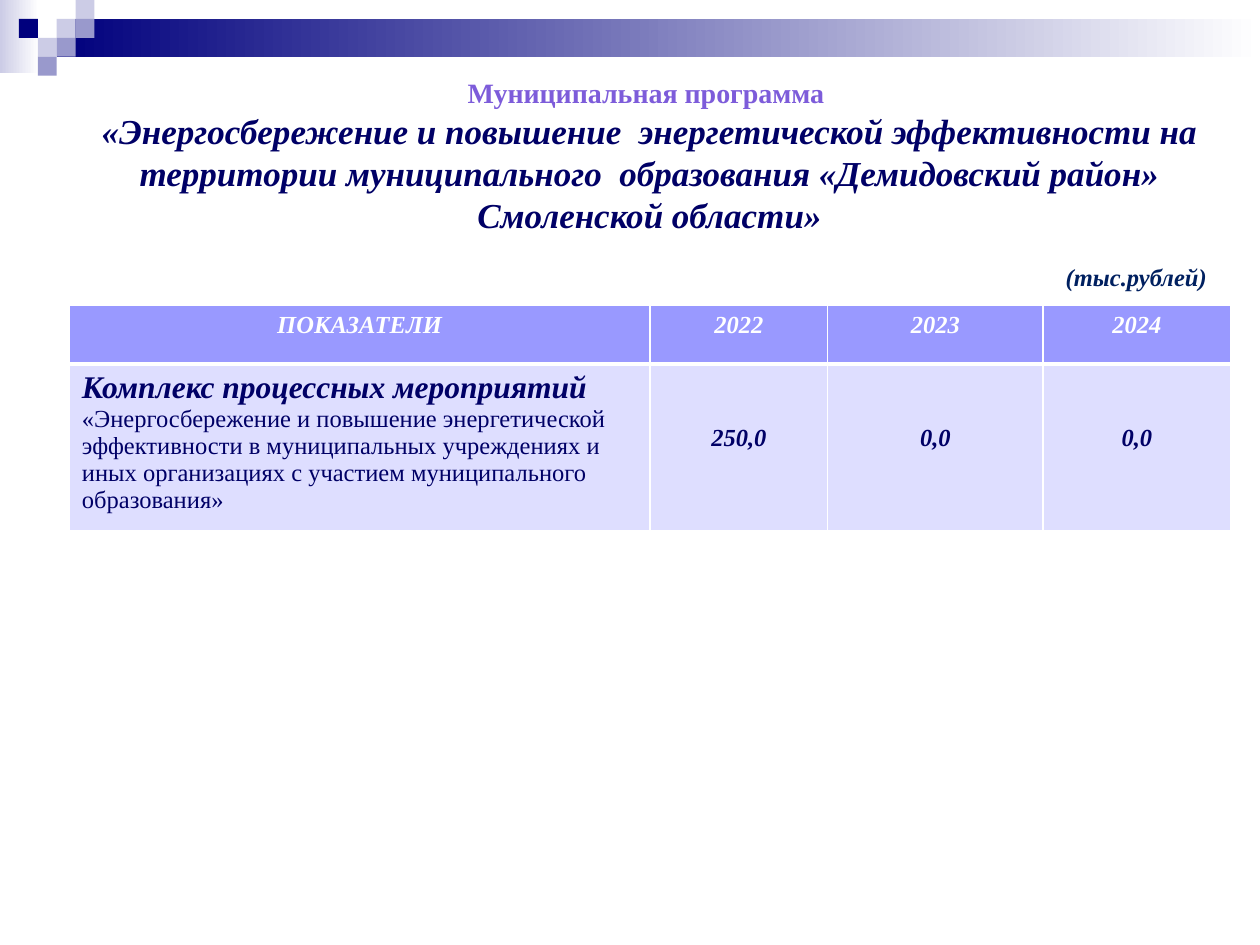
from lxml.etree import SubElement
from pptx import Presentation
from pptx.dml.color import RGBColor
from pptx.enum.shapes import MSO_SHAPE
from pptx.enum.text import MSO_ANCHOR, PP_ALIGN
from pptx.oxml.ns import qn
from pptx.util import Pt

FONT = "Times New Roman"
WHITE = RGBColor(0xFF, 0xFF, 0xFF)
NAVY = RGBColor(0x00, 0x00, 0x7D)
INK = RGBColor(0x00, 0x00, 0x66)
UNIT_INK = RGBColor(0x00, 0x20, 0x60)
VIOLET = RGBColor(0x7D, 0x5C, 0xDA)
PALE = RGBColor(0xCC, 0xCC, 0xE6)
MID = RGBColor(0x99, 0x99, 0xCC)
HEADER_FILL = RGBColor(0x99, 0x99, 0xFF)
BODY_FILL = RGBColor(0xDE, 0xDE, 0xFF)

PROGRAM_KIND = "Муниципальная программа "
PROGRAM_NAME = ("«Энергосбережение и повышение  энергетической эффективности на территории "
                "муниципального  образования «Демидовский район» Смоленской области»")
UNIT = "(тыс.рублей)"
HEADERS = ["ПОКАЗАТЕЛИ", "2022", "2023", "2024"]
MEASURE = "Комплекс процессных мероприятий "
MEASURE_NAME = ("«Энергосбережение и повышение энергетической эффективности в муниципальных "
                "учреждениях и иных организациях с участием муниципального образования»")
VALUES = ["250,0", "0,0", "0,0"]

COL_WIDTHS = [331.9, 101.5, 123.1, 107.3]
ROW_HEIGHTS = [33.8, 95.4]
SQUARE = 10.8
SQUARES_LEFT = 21.6
# column, row, colour of each decorative square
SQUARES = [(1, 1, PALE), (2, 0, PALE), (2, 1, MID), (0, 2, PALE),
           (-1, 1, NAVY), (1, 2, MID), (0, 3, MID)]


def add_text(p, text, size=14, color=INK, bold=True, italic=True, align=PP_ALIGN.CENTER):
    p.alignment = align
    r = p.add_run()
    r.text = text
    f = r.font
    f.name, f.size, f.bold, f.italic = FONT, Pt(size), bold, italic
    f.color.rgb = color


def add_rect(slide, x, y, w, h, color, fade=False):
    """Add a rectangle, solid or fading to white towards the right."""
    sp = slide.shapes.add_shape(MSO_SHAPE.RECTANGLE, Pt(x), Pt(y), Pt(w), Pt(h))
    sp.shadow.inherit = False
    sp.line.fill.background()
    if fade:
        sp.fill.gradient()
        sp.fill.gradient_angle = 0
        for stop, rgb in zip(sp.fill.gradient_stops, (color, WHITE)):
            stop.color.rgb = rgb
    else:
        sp.fill.solid()
        sp.fill.fore_color.rgb = color


def style_cell(cell, fill, top=1, bottom=1):
    """Set white borders, with top and bottom widths in points, then the fill."""
    tc_pr = cell._tc.get_or_add_tcPr()
    for side, width in (("L", 1), ("R", 1), ("T", top), ("B", bottom)):
        ln = SubElement(tc_pr, qn(f"a:ln{side}"), w=str(Pt(width)))
        solid = SubElement(ln, qn("a:solidFill"))
        SubElement(solid, qn("a:srgbClr"), val=str(WHITE))
    cell.fill.solid()
    cell.fill.fore_color.rgb = fill


def add_table(slide):
    table = slide.shapes.add_table(len(ROW_HEIGHTS), len(COL_WIDTHS), Pt(39.6), Pt(174.3),
                                   Pt(sum(COL_WIDTHS)), Pt(sum(ROW_HEIGHTS))).table
    table.horz_banding = False
    for col, width in zip(table.columns, COL_WIDTHS):
        col.width = Pt(width)
    for row, height in zip(table.rows, ROW_HEIGHTS):
        row.height = Pt(height)
    for i, header in enumerate(HEADERS):
        head, body = table.cell(0, i), table.cell(1, i)
        style_cell(head, HEADER_FILL, bottom=3)
        style_cell(body, BODY_FILL, top=3)
        add_text(head.text_frame.paragraphs[0], header, color=WHITE)
        p = body.text_frame.paragraphs[0]
        if i == 0:
            add_text(p, MEASURE, size=18, align=PP_ALIGN.LEFT)
            add_text(p, MEASURE_NAME, bold=False, italic=False, align=PP_ALIGN.LEFT)
        else:
            body.margin_top = Pt(34.6)
            add_text(p, VALUES[i - 1])


def main():
    prs = Presentation()
    prs.slide_width, prs.slide_height = Pt(720), Pt(540)
    slide = prs.slides.add_slide(prs.slide_layouts[5])

    add_rect(slide, 0, 0, 22.3, 41.8, PALE, fade=True)
    add_rect(slide, 32.4, SQUARE, 687.6, 2 * SQUARE, NAVY, fade=True)
    for col, row, color in SQUARES:
        add_rect(slide, SQUARES_LEFT + col * SQUARE, row * SQUARE, SQUARE, SQUARE, color)

    title = slide.shapes.title
    title.left, title.top, title.width, title.height = Pt(22.3), Pt(39.6), Pt(697.7), Pt(99.4)
    tf = title.text_frame
    tf.vertical_anchor = MSO_ANCHOR.TOP
    add_text(tf.paragraphs[0], PROGRAM_KIND, size=16, color=VIOLET, italic=False)
    add_text(tf.add_paragraph(), PROGRAM_NAME, size=20)
    for p in tf.paragraphs:
        p.space_before = Pt(0)

    add_table(slide)

    unit = slide.shapes.add_textbox(Pt(601.9), Pt(146.2), Pt(95.8), Pt(24.5))
    unit.text_frame.word_wrap = False
    add_text(unit.text_frame.paragraphs[0], UNIT, color=UNIT_INK, align=PP_ALIGN.LEFT)

    prs.save("out.pptx")


if __name__ == "__main__":
    main()
